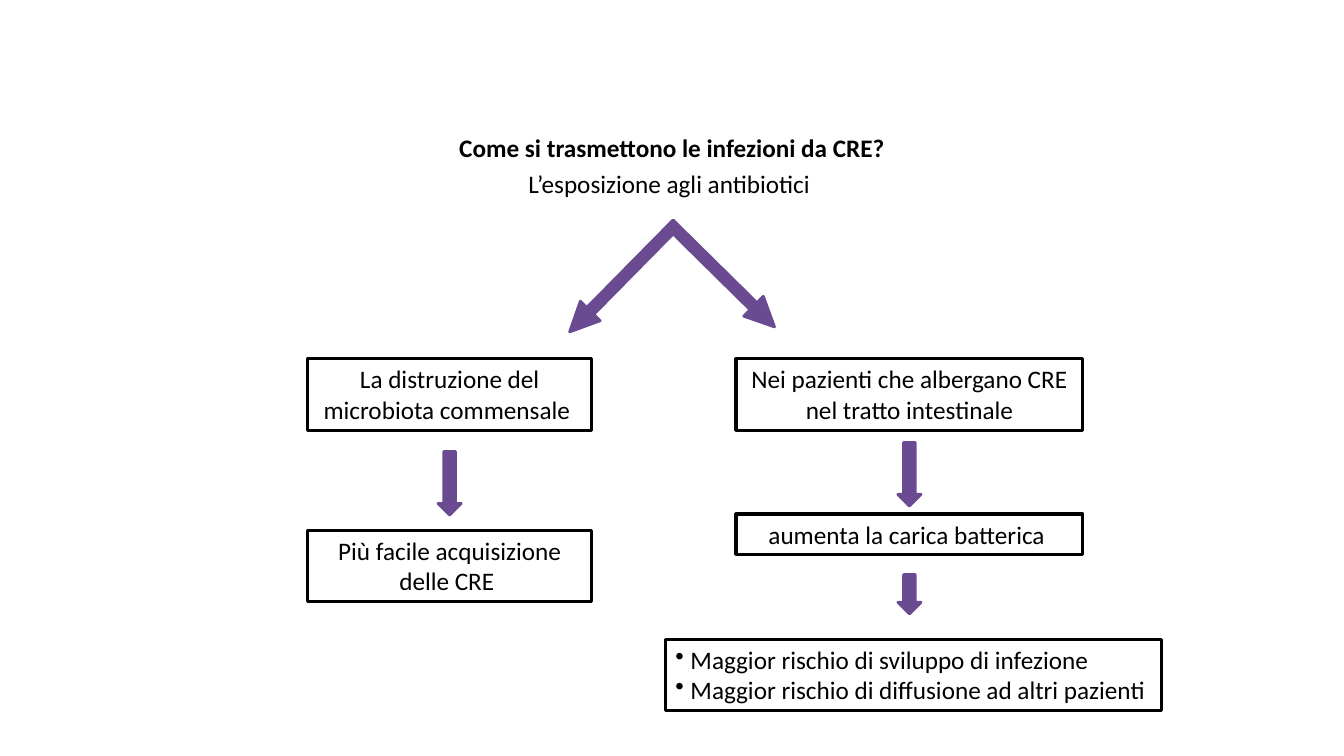
from pptx import Presentation
from pptx import util as u
from pptx.dml.color import RGBColor
from pptx.enum import shapes, text
from pptx.oxml.ns import qn
from lxml import etree

SHAPE = shapes.MSO_SHAPE
ALIGN = text.PP_ALIGN
BLACK, PURPLE = "000000", "6A4A91"
FONT = {"name": "Calibri", "size": u.Pt(18), "bold": False}


def color(code):
    return RGBColor.from_string(code)


def style(font, **extra):
    for key, value in {**FONT, **extra}.items():
        setattr(font, key, value)
    font.color.rgb = color(BLACK)


def bullet(para, char=None, hang=0):
    """Set the bullet and hanging indent; no char means no bullet."""
    props = para._p.get_or_add_pPr()
    props.set("marL", str(u.Inches(hang)))
    props.set("indent", str(-u.Inches(hang)))
    mark = etree.SubElement(props, qn("a:buChar" if char else "a:buNone"))
    if char:
        mark.set("char", char)


def place(slide, kind, box):
    shape = slide.shapes.add_shape(kind, *map(u.Inches, box))
    shape.shadow.inherit = False
    return shape


def header(slide, box):
    body = slide.placeholders[1]
    body.left, body.top, body.width, body.height = map(u.Inches, box)
    frame = body.text_frame
    frame.text = "Come si trasmettono le infezioni da CRE?\nL’esposizione agli antibiotici "
    for i, para in enumerate(frame.paragraphs):
        bullet(para)
        para.alignment = ALIGN.CENTER
        para.space_before = u.Pt(4 * i)
        style(para.font, bold=i == 0)


def panel(slide, box, words, char=None):
    shape = place(slide, SHAPE.RECTANGLE, box)
    shape.fill.background()
    shape.line.color.rgb = color(BLACK)
    shape.line.width = u.Pt(2.25)
    frame = shape.text_frame
    frame.word_wrap = True
    frame.vertical_anchor = text.MSO_ANCHOR.TOP
    frame.text = words
    for para in frame.paragraphs:
        if char:
            bullet(para, char, 0.15)
        para.alignment = ALIGN.LEFT if char else ALIGN.CENTER
        style(para.font)


def arrow(slide, kind, box):
    shape = place(slide, kind, box)
    shape.fill.solid()
    shape.fill.fore_color.rgb = color(PURPLE)
    shape.line.color.rgb = color(PURPLE)
    shape.line.width = u.Pt(2)
    return shape


def fork(slide, box):
    shape = arrow(slide, SHAPE.LEFT_UP_ARROW, box)
    shape.rotation = 224.6
    for i, value in enumerate((0.063, 0.089, 0.188)):
        shape.adjustments[i] = value


def branch(slide, left, width, panels, arrows):
    """Stack panels in a column, with down arrows between them."""
    for top, height, words in panels:
        panel(slide, (left, top, width, height), words)
    thick = 0.23
    for top, height in arrows:
        mid = left + (width - thick) / 2
        arrow(slide, SHAPE.DOWN_ARROW, (mid, top, thick, height))


def main():
    deck = Presentation()
    deck.slide_width, deck.slide_height = u.Inches(13.33), u.Inches(7.5)
    slide = deck.slides.add_slide(deck.slide_layouts[1])
    title = slide.shapes.title._element
    title.getparent().remove(title)

    # Question and the two-way arrow
    header(slide, (2.15, 1.26, 9.03, 0.9))
    fork(slide, (5.89, 2.37, 1.55, 1.6))

    # Left branch: loss of the microbiota
    branch(slide, 3.05, 2.82, [
        (3.56, 0.71, "La distruzione del microbiota commensale "),
        (5.26, 0.71, "Più facile acquisizione delle CRE "),
    ], [(4.48, 0.63)])

    # Right branch: patients who carry CRE
    branch(slide, 7.3, 3.44, [
        (3.56, 0.71, "Nei pazienti che albergano CRE nel tratto intestinale"),
        (5.1, 0.4, "aumenta la carica batterica "),
    ], [(4.39, 0.63), (5.7, 0.39)])

    # Resulting risks
    panel(slide, (6.6, 6.34, 4.92, 0.71),
          "Maggior rischio di sviluppo di infezione\n"
          "Maggior rischio di diffusione ad altri pazienti", "•")

    deck.save("out.pptx")


if __name__ == "__main__":
    main()
